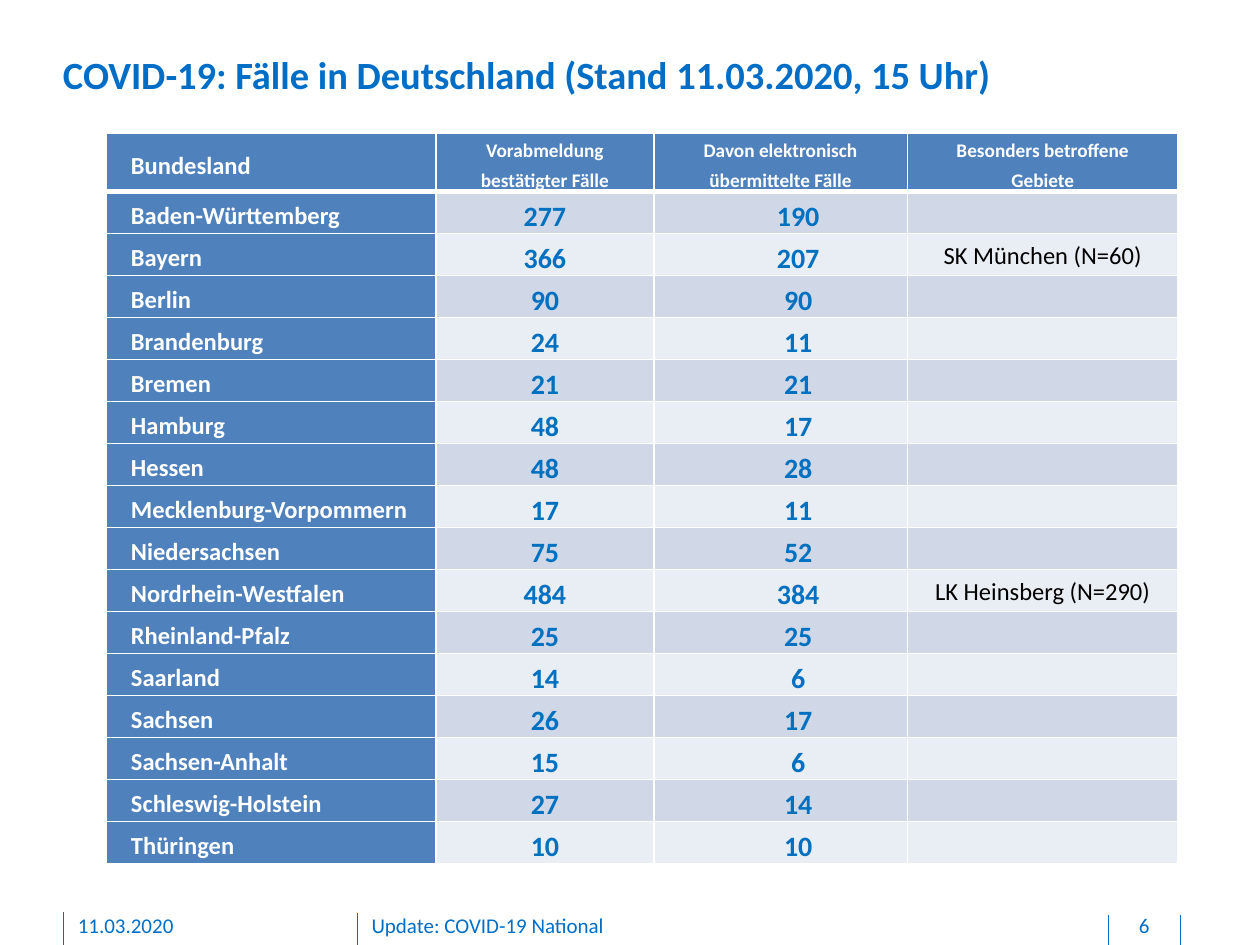
from lxml.etree import SubElement
from pptx import Presentation
from pptx.dml.color import RGBColor
from pptx.enum.shapes import MSO_CONNECTOR as Connector
from pptx.enum.text import MSO_ANCHOR as Anchor, PP_ALIGN as Align
from pptx.oxml.ns import qn
from pptx.util import Cm, Pt

BLUE = RGBColor(0x00, 0x6E, 0xC7)
FIGURE_BLUE = RGBColor(0x00, 0x70, 0xC0)
HEADER_BLUE = RGBColor(0x4F, 0x81, 0xBD)
BANDS = [RGBColor(0xD0, 0xD8, 0xE8), RGBColor(0xE9, 0xED, 0xF4)]
WHITE = RGBColor(0xFF, 0xFF, 0xFF)
BLACK = RGBColor(0, 0, 0)

# Content
TITLE = "COVID-19: Fälle in Deutschland (Stand 11.03.2020, 15 Uhr)"
HEADINGS = ("Bundesland", "Vorabmeldung bestätigter Fälle",
            "Davon elektronisch übermittelte Fälle", "Besonders betroffene Gebiete")
STATES = [
    ("Baden-Württemberg", 277, 190, ""),
    ("Bayern", 366, 207, "SK München (N=60)"),
    ("Berlin", 90, 90, ""),
    ("Brandenburg", 24, 11, ""),
    ("Bremen", 21, 21, ""),
    ("Hamburg", 48, 17, ""),
    ("Hessen", 48, 28, ""),
    ("Mecklenburg-Vorpommern", 17, 11, ""),
    ("Niedersachsen", 75, 52, ""),
    ("Nordrhein-Westfalen", 484, 384, "LK Heinsberg (N=290)"),
    ("Rheinland-Pfalz", 25, 25, ""),
    ("Saarland", 14, 6, ""),
    ("Sachsen", 26, 17, ""),
    ("Sachsen-Anhalt", 15, 6, ""),
    ("Schleswig-Holstein", 27, 14, ""),
    ("Thüringen", 10, 10, ""),
]
# Footer: text, left, width, alignment
FOOTER = [
    ("11.03.2020", 1.57, 5.16, Align.LEFT),
    ("Update: COVID-19 National", 7.49, 14.4, Align.LEFT),
    ("6", 22.38, 1.37, Align.CENTER),
]
# Footer rules: x, top
FOOTER_RULES = [(1.27, 18.39), (7.21, 18.41), (22.35, 18.44), (23.8, 18.44)]

# Table measures in cm
COLUMN_WIDTHS = (6.65, 4.39, 5.11, 5.46)
TABLE_HEIGHT, HEADER_HEIGHT = 14.7, 1.17
ROW_HEIGHT = (TABLE_HEIGHT - HEADER_HEIGHT) / len(STATES)


def write(frame, text, size=14, color=BLUE, bold=False, align=Align.LEFT,
          spacing=None, indent=0):
    paragraph = frame.paragraphs[0]
    paragraph.alignment = align
    if spacing:
        paragraph.line_spacing = spacing
    if indent:
        properties = paragraph._p.get_or_add_pPr()
        properties.set("marL", "0")
        properties.set("indent", str(Cm(indent)))
    run = paragraph.add_run()
    run.text = text
    run.font.name, run.font.size, run.font.bold = "Calibri", Pt(size), bold
    run.font.color.rgb = color


def add_text(slide, text, left, top, width, height, bottom_inset=0, **style):
    frame = slide.shapes.add_textbox(Cm(left), Cm(top), Cm(width), Cm(height)).text_frame
    frame.word_wrap = True
    frame.margin_left = frame.margin_right = frame.margin_top = 0
    frame.margin_bottom = Cm(bottom_inset)
    write(frame, text, **style)


def format_cell(cell, fill, bottom_width=1, top_width=1):
    widths = {"lnL": 1, "lnR": 1, "lnT": top_width, "lnB": bottom_width}
    properties = cell._tc.get_or_add_tcPr()
    for side, width in widths.items():
        border = SubElement(properties, qn(f"a:{side}"), w=str(Pt(width)))
        color = SubElement(border, qn("a:solidFill"))
        SubElement(color, qn("a:srgbClr"), val=str(WHITE))
    cell.fill.solid()
    cell.fill.fore_color.rgb = fill
    cell.margin_left = cell.margin_right = Cm(0.5)
    cell.margin_top = cell.margin_bottom = 0


def cell_style(row, column):
    if column == 0:
        return dict(color=WHITE, bold=True)
    if row == 0:
        return dict(size=11, color=WHITE, bold=True, align=Align.CENTER)
    if column == 3:
        return dict(color=BLACK, align=Align.CENTER)
    return dict(size=16, color=FIGURE_BLUE, bold=True, align=Align.CENTER,
                indent=0.71 if column == 2 else 0)


def add_case_table(slide):
    rows = [HEADINGS, *STATES]
    table = slide.shapes.add_table(len(rows), len(HEADINGS), Cm(2.14), Cm(2.69),
                                   Cm(sum(COLUMN_WIDTHS)), Cm(TABLE_HEIGHT)).table
    for column, width in zip(table.columns, COLUMN_WIDTHS):
        column.width = Cm(width)
    for r, values in enumerate(rows):
        table.rows[r].height = Cm(ROW_HEIGHT if r else HEADER_HEIGHT)
        for c, value in enumerate(values):
            cell = table.cell(r, c)
            fill = HEADER_BLUE if r == 0 or c == 0 else BANDS[(r - 1) % 2]
            format_cell(cell, fill, bottom_width=1 if r else 3,
                        top_width=3 if r == 1 else 1)
            top_anchored = (r == 0 and c == 2) or (r > 0 and c == 3)
            cell.vertical_anchor = Anchor.TOP if top_anchored else Anchor.MIDDLE
            if value != "":
                write(cell.text_frame, str(value), spacing=1.25, **cell_style(r, c))


def add_footer(slide, bottom):
    for x, top in FOOTER_RULES:
        rule = slide.shapes.add_connector(Connector.STRAIGHT, Cm(x), Cm(top), Cm(x), bottom)
        rule.line.color.rgb = BLUE
        rule.line.width = Pt(0.5)
        SubElement(rule._element.spPr, qn("a:effectLst"))
    for text, left, width, align in FOOTER:
        add_text(slide, text, left, 18.39, width, 0.53, bottom_inset=0.13,
                 size=12, align=align)


def main():
    deck = Presentation()
    deck.slide_width, deck.slide_height = Cm(25.4), Cm(19.05)
    slide = deck.slides.add_slide(deck.slide_layouts[6])
    add_footer(slide, deck.slide_height)
    add_text(slide, TITLE, 1.27, 1.02, 22.48, 0.94, size=22, bold=True)
    add_case_table(slide)
    deck.save("out.pptx")


if __name__ == "__main__":
    main()
